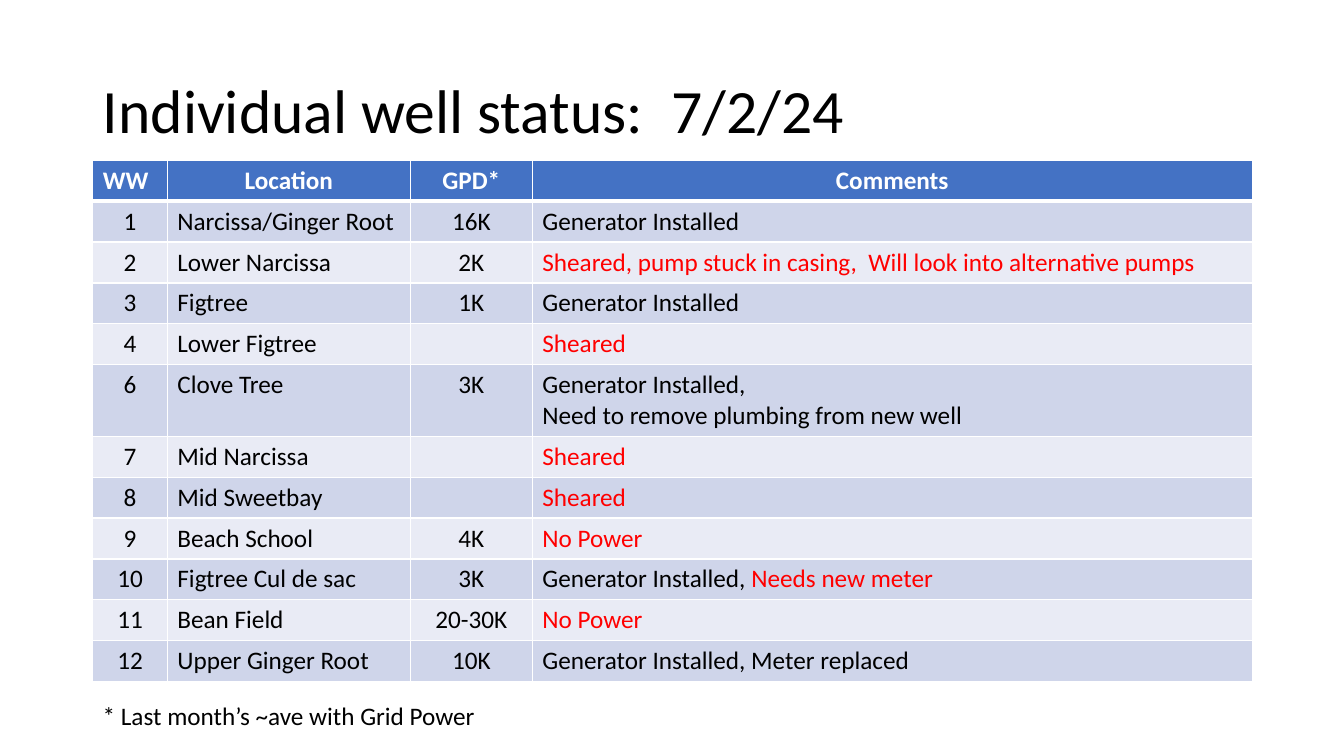
from lxml.etree import SubElement
from pptx import Presentation
from pptx.dml.color import RGBColor
from pptx.enum.text import MSO_ANCHOR as Anchor, MSO_AUTO_SIZE as AutoSize, PP_ALIGN as Align
from pptx.oxml.ns import qn
from pptx.util import Inches, Pt

COLORS = {"header": "4472C4", "odd": "CFD5EA", "even": "E9EBF5",
          "text": "000000", "alert": "FF0000", "white": "FFFFFF"}
LEFT, WIDTH = Inches(0.92), Inches(11.5)
TABLE_TOP, ROW_HEIGHT = Inches(1.59), Inches(0.4)  # rows grow to fit their text
COLUMN_WIDTHS = [0.74, 2.41, 1.21, 7.14]
HEADINGS = ["WW", "Location", "GPD*", "Comments"]
CENTERED_COLUMNS = {"WW", "GPD*"}

# Each comment is a list of lines, and each line a list of (wording, color) runs.
INSTALLED = [[("Generator Installed", "text")]]
SHEARED = [[("Sheared", "alert")]]
NO_POWER = [[("No Power", "alert")]]
WELLS = [
    ("1", "Narcissa/Ginger Root", "16K", INSTALLED),
    ("2", "Lower Narcissa", "2K",
     [[("Sheared, pump stuck in casing,  Will look into alternative pumps", "alert")]]),
    ("3", "Figtree", "1K", INSTALLED),
    ("4", "Lower Figtree", "", SHEARED),
    ("6", "Clove Tree", "3K", [[("Generator Installed,", "text")],
                               [("Need to remove plumbing from new well", "text")]]),
    ("7", "Mid Narcissa", "", SHEARED),
    ("8", "Mid Sweetbay", "", SHEARED),
    ("9", "Beach School", "4K", NO_POWER),
    ("10", "Figtree Cul de sac", "3K",
     [[("Generator Installed, ", "text"), ("Needs new meter", "alert")]]),
    ("11", "Bean Field", "20-30K", NO_POWER),
    ("12", "Upper Ginger Root", "10K", [[("Generator Installed, Meter replaced", "text")]]),
]


def add_run(para, wording, color="text", size=18, bold=False):
    span = para.add_run()
    span.text = wording
    span.font.name = "Calibri"
    span.font.size = Pt(size)
    span.font.bold = bold
    span.font.color.rgb = RGBColor.from_string(COLORS[color])


def fill_cell(cell, lines, fill, align, bold=False):
    cell.fill.solid()
    cell.fill.fore_color.rgb = RGBColor.from_string(COLORS[fill])
    for number, line in enumerate(lines):
        frame = cell.text_frame
        para = frame.add_paragraph() if number else frame.paragraphs[0]
        para.alignment = align
        for wording, color in line:
            add_run(para, wording, color, bold=bold)


deck = Presentation()
deck.slide_width, deck.slide_height = Inches(13.33), Inches(7.5)
page = deck.slides.add_slide(deck.slide_layouts[5])

# Title
title = page.shapes.title
title.left, title.top, title.width, title.height = LEFT, Inches(0.4), WIDTH, Inches(1.45)
title.text_frame.auto_size = AutoSize.NONE
title.text_frame.vertical_anchor = Anchor.MIDDLE
para = title.text_frame.paragraphs[0]
para.alignment = Align.LEFT
para.line_spacing = 0.9
add_run(para, "Individual well status:  7/2/24", size=44)

# Well table; its default style draws the thin white rules
row_count = len(WELLS) + 1
table = page.shapes.add_table(row_count, len(HEADINGS), LEFT, TABLE_TOP,
                              WIDTH, ROW_HEIGHT * row_count).table
for column, width in zip(table.columns, COLUMN_WIDTHS):
    column.width = Inches(width)

for index, heading in enumerate(HEADINGS):
    cell = table.cell(0, index)
    align = Align.LEFT if heading == "WW" else Align.CENTER
    fill_cell(cell, [[(heading, "white")]], "header", align, bold=True)
    # The thick rule under the header must come before the fill
    properties = cell._tc.get_or_add_tcPr()
    rule = SubElement(properties, qn("a:lnB"), w=str(Pt(3)))
    SubElement(SubElement(rule, qn("a:solidFill")), qn("a:srgbClr"), val=COLORS["white"])
    properties.insert(0, rule)

for row, (*facts, comment) in enumerate(WELLS, start=1):
    entries = [[[(fact, "text")]] if fact else [] for fact in facts] + [comment]
    for index, lines in enumerate(entries):
        align = Align.CENTER if HEADINGS[index] in CENTERED_COLUMNS else Align.LEFT
        fill_cell(table.cell(row, index), lines, "odd" if row % 2 else "even", align)

# Footnote
box = page.shapes.add_textbox(LEFT, Inches(6.9), Inches(6.66), Inches(0.4))
box.text_frame.word_wrap = True
add_run(box.text_frame.paragraphs[0], "* Last month’s ~ave with Grid Power")

deck.save("out.pptx")
